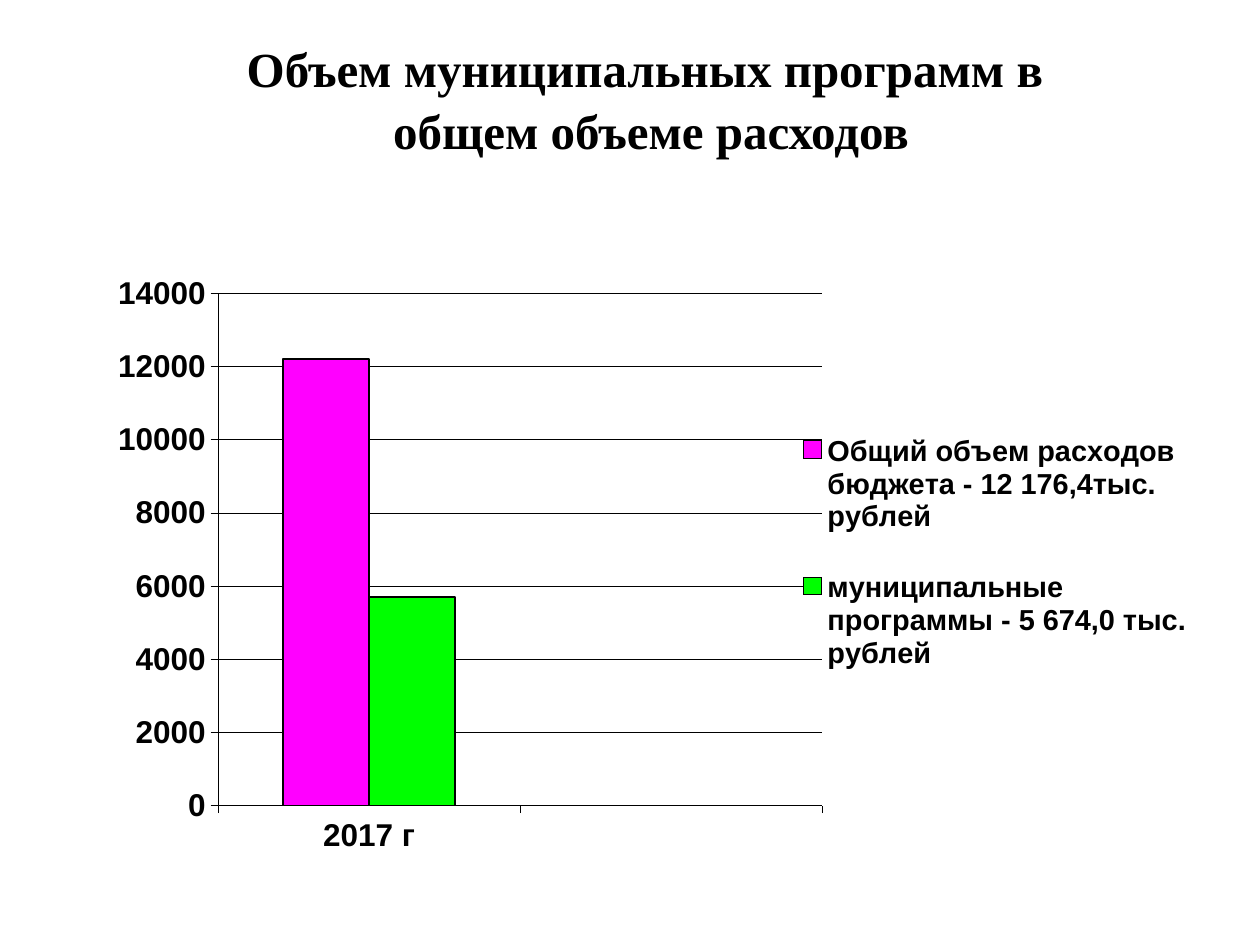
from dataclasses import dataclass

from lxml.etree import SubElement
from pptx import Presentation
from pptx.chart.data import CategoryChartData
from pptx.dml.color import RGBColor
from pptx.enum.chart import (XL_CHART_TYPE as ChartType, XL_LEGEND_POSITION as LegendPos,
                             XL_TICK_LABEL_POSITION as LabelPos, XL_TICK_MARK as Tick)
from pptx.enum.text import MSO_ANCHOR, PP_ALIGN
from pptx.oxml.ns import qn
from pptx.util import Emu, Pt

PX = 914400 // 126


@dataclass(frozen=True)
class Theme:
    ink: RGBColor = RGBColor(0, 0, 0)
    total: RGBColor = RGBColor(0xFF, 0, 0xFF)
    programs: RGBColor = RGBColor(0, 0xFF, 0)
    title_font: str = "Times New Roman"
    chart_font: str = "Arial"
    title_size: float = 28
    axis_size: float = 18
    legend_size: float = 16.5
    thin: float = 0.25
    outline: float = 1


THEME = Theme()
TITLE = ["Объем муниципальных программ в ", "общем объеме расходов"]
CATEGORIES = ["2017 г", ""]
SERIES = [
    ("Общий объем расходов бюджета - 12 176,4тыс. рублей", [12200, None], THEME.total),
    ("муниципальные программы - 5 674,0 тыс. рублей", [5700, None], THEME.programs),
]


def box(*lengths):
    return [Emu(n * PX) for n in lengths]


def style_font(font, name, size):
    font.name, font.size, font.bold = name, Pt(size), True
    font.color.rgb = THEME.ink


def style_line(line, width):
    line.color.rgb, line.width = THEME.ink, Pt(width)


def add_title(slide, lines):
    s = slide.shapes.title
    s.left, s.top, s.width, s.height = box(84, 32, 1134, 157)
    tf = s.text_frame
    tf.text = "\n".join(lines)
    tf.vertical_anchor = MSO_ANCHOR.TOP
    for p in tf.paragraphs:
        p.alignment = PP_ALIGN.CENTER
        p.space_before = Pt(2)
        style_font(p.font, THEME.title_font, THEME.title_size)


def set_layout(part, x, y, w, h, inner=False):
    """Place a plot area or a legend by fractions of the chart."""
    layout = part.find(qn("c:layout"))
    if layout is None:
        layout = SubElement(part, qn("c:layout"))
        anchor = part.find(qn("c:legendPos"))
        if anchor is not None:
            anchor.addnext(layout)
        else:
            part.insert(0, layout)
    for child in list(layout):
        layout.remove(child)
    manual = SubElement(layout, qn("c:manualLayout"))
    values = [("xMode", "edge"), ("yMode", "edge"), ("x", x), ("y", y), ("w", w), ("h", h)]
    if inner:
        values.insert(0, ("layoutTarget", "inner"))
    for tag, value in values:
        SubElement(manual, qn(f"c:{tag}")).set("val", str(value))


def style_axis(axis):
    axis.major_tick_mark, axis.minor_tick_mark = Tick.OUTSIDE, Tick.NONE
    style_font(axis.tick_labels.font, THEME.chart_font, THEME.axis_size)
    style_line(axis.format.line, THEME.thin)


def add_legend(chart):
    chart.has_legend = True
    legend = chart.legend
    legend.position = LegendPos.RIGHT
    legend.include_in_layout = False
    style_font(legend.font, THEME.chart_font, THEME.legend_size)
    set_layout(chart.element.find(".//" + qn("c:legend")), 0.64, 0.2, 0.35, 0.51)


def add_column_chart(slide):
    data = CategoryChartData(number_format="General")
    data.categories = CATEGORIES
    for name, values, _ in SERIES:
        data.add_series(name, values)
    chart = slide.shapes.add_chart(
        ChartType.COLUMN_CLUSTERED, *box(84, 275, 1118, 610), data).chart
    chart.has_title = False
    style_font(chart.font, THEME.chart_font, THEME.axis_size)

    # Columns
    plot = chart.plots[0]
    plot.gap_width, plot.overlap, plot.vary_by_categories = 150, 0, False
    for series, (_, _, color) in zip(plot.series, SERIES):
        series.format.fill.solid()
        series.format.fill.fore_color.rgb = color
        style_line(series.format.line, THEME.outline)

    # Axes
    style_axis(chart.category_axis)
    chart.category_axis.tick_label_position = LabelPos.LOW
    axis = chart.value_axis
    style_axis(axis)
    axis.minimum_scale, axis.maximum_scale, axis.major_unit = 0, 14000, 2000
    axis.has_major_gridlines = True
    style_line(axis.major_gridlines.format.line, THEME.thin)

    # Plot area and legend
    set_layout(chart.element.find(".//" + qn("c:plotArea")),
               0.12, 0.03, 0.54, 0.84, inner=True)
    add_legend(chart)


def main():
    prs = Presentation()
    prs.slide_width, prs.slide_height = box(1260, 945)
    slide = prs.slides.add_slide(prs.slide_layouts[5])
    add_title(slide, TITLE)
    add_column_chart(slide)
    prs.save("out.pptx")


if __name__ == "__main__":
    main()
